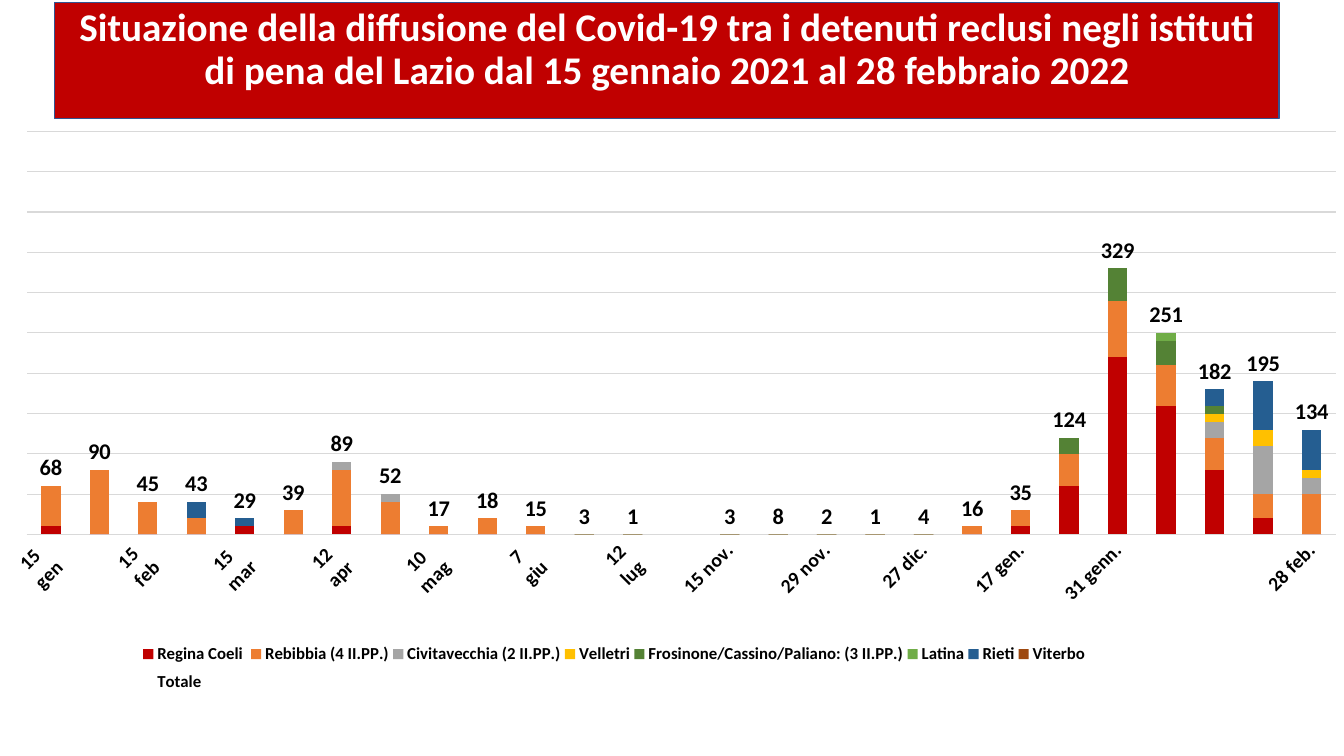
from dataclasses import dataclass
from typing import Optional

from lxml.etree import Element, SubElement
from pptx import Presentation
from pptx.chart.chart import Chart
from pptx.chart.data import CategoryChartData
from pptx.dml.color import RGBColor
from pptx.enum.chart import XL_CHART_TYPE, XL_LABEL_POSITION, XL_LEGEND_POSITION, XL_TICK_MARK
from pptx.enum.text import MSO_ANCHOR, MSO_AUTO_SIZE, PP_ALIGN
from pptx.oxml.ns import qn
from pptx.slide import Slide
from pptx.util import Cm, Pt

FONT = "Calibri"
GRID = "D9D9D9"


@dataclass
class Prison:
    name: str
    color: str


@dataclass
class Survey:
    date: str
    cases: tuple[Optional[int], ...]
    total: Optional[int]


PRISONS = [
    Prison("Regina Coeli ", "C00000"),
    Prison("Rebibbia (4 II.PP.)", "ED7D31"),
    Prison("Civitavecchia (2 II.PP.)", "A5A5A5"),
    Prison("Velletri", "FFC000"),
    Prison("Frosinone/Cassino/Paliano: (3 II.PP.)", "548235"),
    Prison("Latina", "70AD47"),
    Prison("Rieti", "255E91"),
    Prison("Viterbo", "9E480E"),
]

SURVEYS = [
    Survey("15\n gen", (10, 50, 0, 0, 0, 0, 0, 0), 68),
    Survey("29 \ngen", (0, 80, 0, 0, 0, 0, 0, 0), 90),
    Survey("15 \nfeb", (0, 40, 0, 0, 0, 0, 0, 0), 45),
    Survey("1 \nmar", (0, 20, 0, 0, 0, 0, 20, 0), 43),
    Survey("15 \nmar", (10, 0, 0, 0, 0, 0, 10, 0), 29),
    Survey("29 \nmar", (0, 30, 0, 0, 0, 0, 0, 0), 39),
    Survey("12 \napr", (10, 70, 10, 0, 0, 0, 0, 0), 89),
    Survey("26 \napr", (0, 40, 10, 0, 0, 0, 0, 0), 52),
    Survey("10 \nmag", (0, 10, 0, 0, 0, 0, 0, 0), 17),
    Survey("24 \nmag", (0, 20, 0, 0, 0, 0, 0, 0), 18),
    Survey("7 \ngiu", (0, 10, 0, 0, 0, 0, 0, 0), 15),
    Survey("21 \ngiu", (0, 0, 0, 0, 0, 0, 0, 0), 3),
    Survey("12\nlug", (0, 0, 0, 0, 0, 0, 0, 0), 1),
    Survey("", (None,) * len(PRISONS), None),
    Survey("15 nov.", (0, 0, 0, 0, 0, 0, 0, 0), 3),
    Survey(" 22 nov.", (0, 0, 0, 0, 0, 0, 0, 0), 8),
    Survey("29 nov.", (0, 0, 0, 0, 0, 0, 0, 0), 2),
    Survey("13 dic.", (0, 0, None, 0, 0, 0, 0, 0), 1),
    Survey("27 dic.", (0, 0, 0, 0, 0, 0, 0, 0), 4),
    Survey("10 gen.", (0, 10, 0, 0, 0, 0, 0, 0), 16),
    Survey("17 gen.", (10, 20, 0, 0, 0, 0, 0, 0), 35),
    Survey("", (60, 40, 0, 0, 20, 0, 0, 0), 124),
    Survey("31 genn.", (220, 70, 0, 0, 40, 0, 0, 0), 329),
    Survey("", (160, 50, 0, 0, 30, 10, 0, 0), 251),
    Survey("", (80, 40, 20, 10, 10, 0, 20, 0), 182),
    Survey("21 febb", (20, 30, 60, 20, 0, 0, 60, 0), 195),
    Survey("28 feb.", (0, 50, 20, 10, 0, 0, 50, 0), 134),
]


def rgb(color: str) -> RGBColor:
    return RGBColor.from_string(color)


def style_font(font, size: float, color: str = "000000", bold: bool = True) -> None:
    font.name = FONT
    font.size = Pt(size)
    font.bold = bold
    font.color.rgb = rgb(color)


def manual_layout(x: float, y: float, width: float, height: float, inner: bool = False):
    layout = Element(qn("c:layout"))
    manual = SubElement(layout, qn("c:manualLayout"))
    settings = {"layoutTarget": "inner"} if inner else {}
    settings |= {"xMode": "edge", "yMode": "edge", "x": x, "y": y, "w": width, "h": height}
    for tag, value in settings.items():
        SubElement(manual, qn(f"c:{tag}")).set("val", str(value))
    return layout


def add_title(page: Slide) -> None:
    title = page.shapes.title
    title.left, title.top, title.width, title.height = Cm(1.37), Cm(0.07), Cm(30.86), Cm(2.92)
    title.fill.solid()
    title.fill.fore_color.rgb = rgb("C00000")
    title.line.color.rgb = rgb("325491")
    title.line.width = Pt(1)
    frame = title.text_frame
    frame.text = (
        "Situazione della diffusione del Covid-19 tra i detenuti reclusi negli istituti "
        "di pena del Lazio dal 15 gennaio 2021 al 28 febbraio 2022"
    )
    frame.word_wrap = True
    frame.auto_size = MSO_AUTO_SIZE.NONE
    frame.vertical_anchor = MSO_ANCHOR.TOP
    para = frame.paragraphs[0]
    para.alignment = PP_ALIGN.CENTER
    para.line_spacing = 0.9
    para.space_before = Pt(10)
    style_font(para.font, 28, "FFFFFF")


def add_case_chart(page: Slide) -> Chart:
    data = CategoryChartData()
    data.categories = [survey.date for survey in SURVEYS]
    for index, prison in enumerate(PRISONS):
        data.add_series(prison.name, [survey.cases[index] for survey in SURVEYS])
    data.add_series("Totale", [survey.total for survey in SURVEYS])
    frame = page.shapes.add_chart(
        XL_CHART_TYPE.COLUMN_STACKED, Cm(0.13), Cm(2.99), Cm(33.74), Cm(16.1), data
    )
    chart = frame.chart
    chart.has_title = False
    style_font(chart.font, 10, bold=False)
    chart._chartSpace.chart.plotArea.insert(0, manual_layout(0.016, 0.02, 0.978, 0.631, inner=True))
    return chart


def style_bars(chart: Chart) -> None:
    plot = chart.plots[0]
    plot.gap_width = 150
    plot.overlap = 100
    plot.vary_by_categories = False
    *prison_bars, total_bars = plot.series
    for prison, bars in zip(PRISONS, prison_bars):
        bars.format.fill.solid()
        bars.format.fill.fore_color.rgb = rgb(prison.color)
    total_bars.format.fill.background()
    total_bars.format.line.fill.background()
    labels = total_bars.data_labels
    labels.show_value = True
    labels.position = XL_LABEL_POSITION.INSIDE_BASE
    style_font(labels.font, 16)


def style_axes(chart: Chart) -> None:
    dates = chart.category_axis
    dates.major_tick_mark = dates.minor_tick_mark = XL_TICK_MARK.NONE
    style_font(dates.tick_labels.font, 14)
    dates._element.txPr.bodyPr.set("rot", "-2700000")
    cases = chart.value_axis
    cases.minimum_scale = 0
    cases.maximum_scale = 500
    cases.major_unit = 50
    cases.has_major_gridlines = True
    cases.visible = False
    for line in (dates.format.line, cases.major_gridlines.format.line):
        line.color.rgb = rgb(GRID)
        line.width = Pt(0.75)


def style_legend(chart: Chart) -> None:
    chart.has_legend = True
    legend = chart.legend
    legend.position = XL_LEGEND_POSITION.BOTTOM
    legend.include_in_layout = False
    style_font(legend.font, 12)
    position = legend._element.find(qn("c:legendPos"))
    for layout in legend._element.findall(qn("c:layout")):
        legend._element.remove(layout)
    position.addnext(manual_layout(0.1, 0.81, 0.71, 0.1))


def main() -> None:
    deck = Presentation()
    deck.slide_width, deck.slide_height = Cm(33.87), Cm(19.05)
    page = deck.slides.add_slide(deck.slide_layouts.get_by_name("Title Only"))
    add_title(page)
    chart = add_case_chart(page)
    style_bars(chart)
    style_axes(chart)
    style_legend(chart)
    deck.save("out.pptx")


if __name__ == "__main__":
    main()
